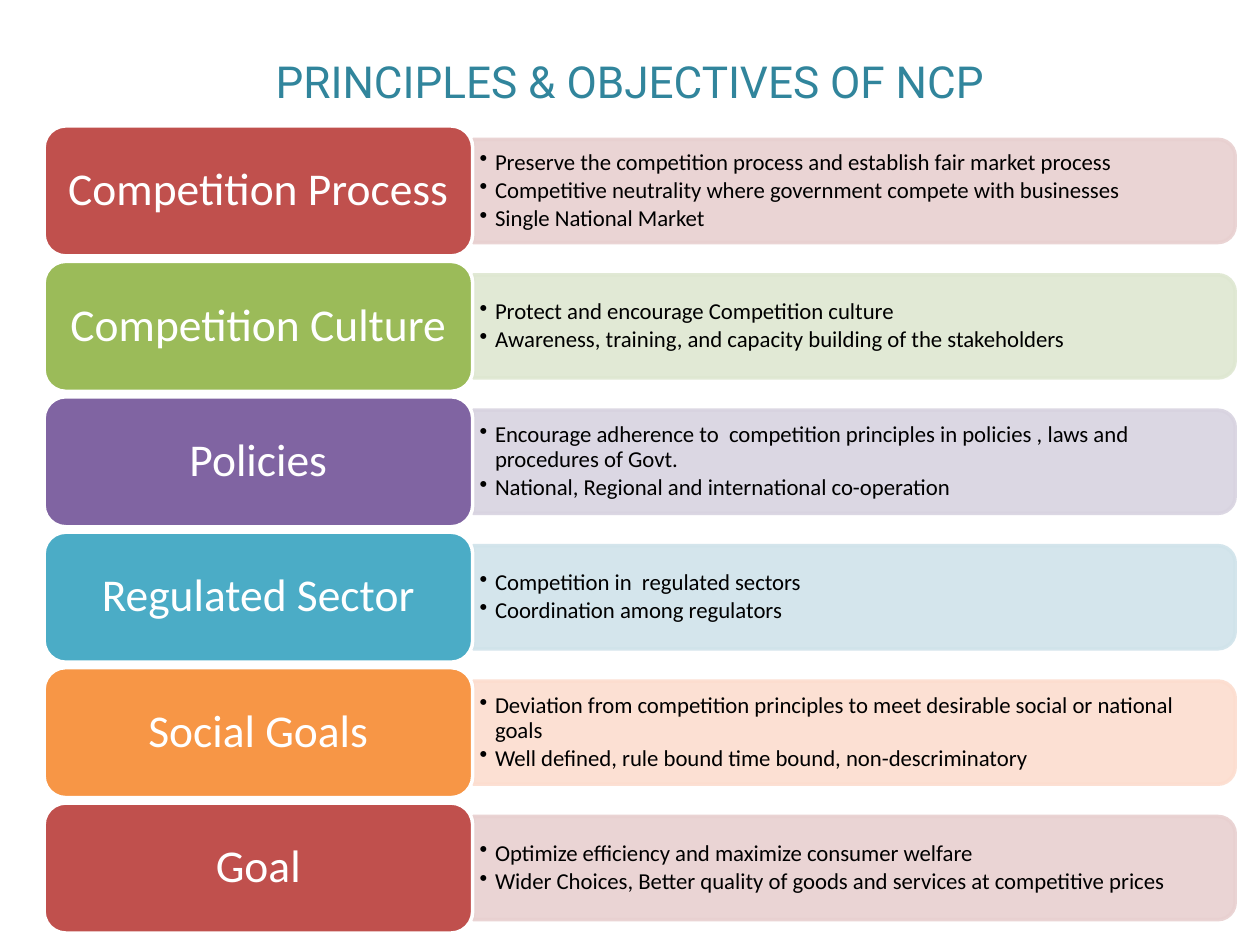
from pptx import Presentation
from pptx.dml.color import RGBColor
from pptx.enum.shapes import MSO_SHAPE as Preset
from pptx.enum.text import MSO_ANCHOR as Anchor, PP_ALIGN as Align
from pptx.oxml.ns import qn
from pptx.util import Cm, Pt
from lxml.etree import SubElement

TITLE = "PRINCIPLES & OBJECTIVES OF NCP"
PRINCIPLES = [
    ("Competition Process", "red", [
        "Preserve the competition process and establish fair market process",
        "Competitive neutrality where government compete with businesses",
        "Single National Market"]),
    ("Competition Culture", "green", [
        "Protect and encourage Competition culture",
        "Awareness, training, and capacity building of the stakeholders"]),
    ("Policies", "purple", [
        "Encourage adherence to  competition principles in policies , laws and procedures of Govt.",
        "National, Regional and international co-operation"]),
    ("Regulated Sector", "aqua", [
        "Competition in  regulated sectors",
        "Coordination among regulators"]),
    ("Social Goals", "orange", [
        "Deviation from competition principles to meet desirable social or national goals",
        "Well defined, rule bound time bound, non-descriminatory"]),
    ("Goal", "red", [
        "Optimize efficiency and maximize consumer welfare",
        "Wider Choices, Better quality of goods and services at competitive prices"]),
]
COLORS = {
    "title": "31859C", "white": "FFFFFF", "black": "000000",
    "red": "C0504D", "red tint": "E8D0D0",
    "green": "9BBB59", "green tint": "DEE7D1",
    "purple": "8064A2", "purple tint": "D8D3E0",
    "aqua": "4BACC6", "aqua tint": "D0E3EA",
    "orange": "F79646", "orange tint": "FCDDCF",
}

# Layout, in centimetres
FIRST_TOP, ROW_PITCH = 2.54, 2.73
LABEL_LEFT, LABEL_WIDTH, LABEL_HEIGHT = 0.89, 8.64, 2.62
BAR_LEFT, BAR_LENGTH, BAR_HEIGHT = 9.54, 15.36, 2.08
POINTS_WIDTH, POINTS_HEIGHT = 15.27, 1.88
HANG = 0.31


def rgb(name):
    return RGBColor.from_string(COLORS[name])


def format_runs(paragraph, font_name, size, color):
    for run in paragraph.runs:
        run.font.name = font_name
        run.font.size = Pt(size)
        run.font.color.rgb = rgb(color)


def set_insets(frame, side, end):
    frame.margin_left = frame.margin_right = Cm(side)
    frame.margin_top = frame.margin_bottom = Cm(end)
    frame.vertical_anchor = Anchor.MIDDLE
    frame.word_wrap = True


def paint(shape, fill, line):
    shape.shadow.inherit = False
    shape.fill.solid()
    shape.fill.fore_color.rgb = rgb(fill)
    shape.line.color.rgb = rgb(line)
    shape.line.width = Pt(2)


def add_bar(shapes, middle, color):
    """Draw a bar whose rounded end points right: a turned upright shape."""
    bar = shapes.add_shape(
        Preset.ROUND_2_SAME_RECTANGLE,
        Cm(BAR_LEFT + (BAR_LENGTH - BAR_HEIGHT) / 2), Cm(middle - BAR_LENGTH / 2),
        Cm(BAR_HEIGHT), Cm(BAR_LENGTH))
    bar.rotation = 90
    paint(bar, color, color)
    for tint in bar._element.spPr.iter(qn("a:srgbClr")):
        SubElement(tint, qn("a:alpha"), val="90000")


def add_points(shapes, middle, points):
    frame = shapes.add_textbox(
        Cm(BAR_LEFT), Cm(middle - POINTS_HEIGHT / 2),
        Cm(POINTS_WIDTH), Cm(POINTS_HEIGHT)).text_frame
    set_insets(frame, 0.13, 0.07)
    frame.text = "\n".join(points)
    for point in frame.paragraphs:
        point.level = 1
        point.line_spacing = 0.9
        point.space_after = Pt(2)
        format_runs(point, "Calibri", 13, "black")
        properties = point._p.get_or_add_pPr()
        properties.set("marL", str(Cm(HANG)))
        properties.set("indent", str(-Cm(HANG)))
        SubElement(properties, qn("a:buChar"), char="•")


def add_label(shapes, top, name, color):
    label = shapes.add_shape(
        Preset.ROUNDED_RECTANGLE, Cm(LABEL_LEFT), Cm(top),
        Cm(LABEL_WIDTH), Cm(LABEL_HEIGHT))
    paint(label, color, "white")
    frame = label.text_frame
    set_insets(frame, 0.3, 0.25)
    frame.text = name
    heading = frame.paragraphs[0]
    heading.alignment = Align.CENTER
    heading.line_spacing = 0.9
    format_runs(heading, "Calibri", 26, "white")


def main():
    deck = Presentation()
    deck.slide_width, deck.slide_height = Cm(25.4), Cm(19.05)
    slide = deck.slides.add_slide(deck.slide_layouts[5])

    title = slide.shapes.title
    title.left, title.top, title.width, title.height = Cm(1.27), Cm(0.76), Cm(22.86), Cm(1.75)
    title.text_frame.text = TITLE
    title.text_frame.vertical_anchor = Anchor.MIDDLE
    title.text_frame.paragraphs[0].alignment = Align.CENTER
    format_runs(title.text_frame.paragraphs[0], "Roboto", 25.2, "title")

    for row, (name, color, points) in enumerate(PRINCIPLES):
        top = FIRST_TOP + row * ROW_PITCH
        middle = top + LABEL_HEIGHT / 2
        add_bar(slide.shapes, middle, f"{color} tint")
        add_points(slide.shapes, middle, points)
        add_label(slide.shapes, top, name, color)

    deck.save("out.pptx")


if __name__ == "__main__":
    main()
